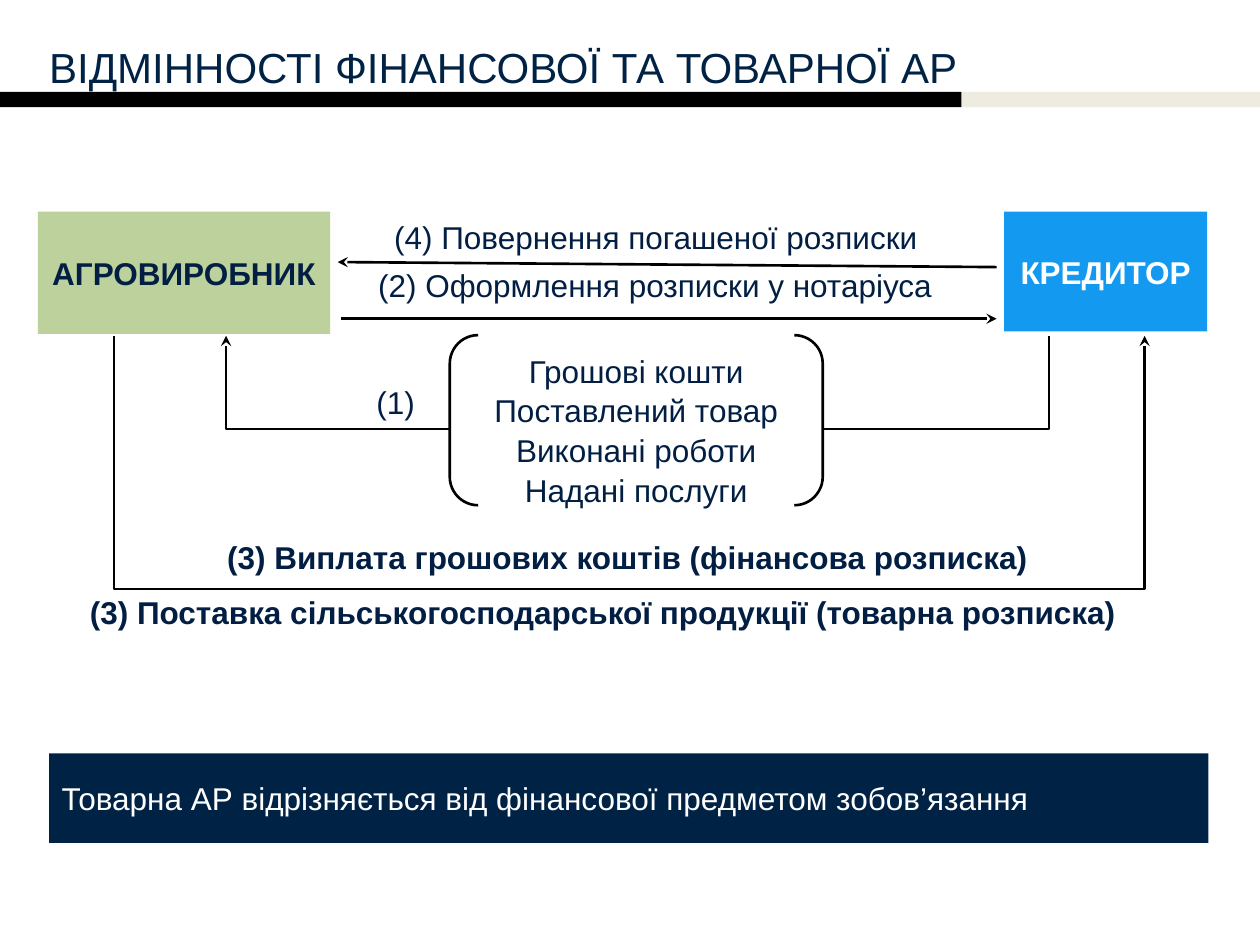
from lxml import etree
from pptx import Presentation
from pptx.dml.color import RGBColor
from pptx.enum.shapes import MSO_CONNECTOR, MSO_SHAPE
from pptx.enum.text import MSO_ANCHOR, PP_ALIGN
from pptx.oxml.ns import qn
from pptx.util import Inches, Pt

RECT, BRACKET, PAIR = MSO_SHAPE.RECTANGLE, MSO_SHAPE.LEFT_BRACKET, MSO_SHAPE.DOUBLE_BRACKET
LEFT, CENTER = PP_ALIGN.LEFT, PP_ALIGN.CENTER
TOP, MIDDLE = MSO_ANCHOR.TOP, MSO_ANCHOR.MIDDLE
COLORS = {"navy": "002345", "ink": "021F43", "green": "BCD19B", "blue": "139AF0",
          "cream": "EEECE1", "black": "000000", "white": "FFFFFF"}

deck = Presentation()
deck.slide_width, deck.slide_height = Inches(10), Inches(7.5)
page = deck.slides.add_slide(deck.slide_layouts[5])
COL, ROW = deck.slide_width / 100, deck.slide_height / 75


def cells(left, top, width, height):
    """Turn grid columns and rows into slide lengths."""
    return [round(n * unit) for n, unit in zip((left, top, width, height), (COL, ROW, COL, ROW))]


def write(box, text, color, bold=False, align=CENTER, anchor=MIDDLE, size=18):
    frame = box.text_frame
    frame.text = text
    frame.word_wrap = True
    frame.vertical_anchor = anchor
    for para in frame.paragraphs:
        para.alignment = align
        for span in para.runs:
            span.font.name, span.font.size, span.font.bold = "Arial", Pt(size), bold
            span.font.color.rgb = RGBColor.from_string(COLORS[color])


# Header band and title
blocks = []
for place, fill in [
    ((73.4, 7.3, 26.6, 1.2), "cream"),
    ((0, 7.3, 76.3, 1.2), "black"),
    ((3, 16.8, 23.2, 9.7), "green"),
    ((79.7, 16.8, 16.1, 9.5), "blue"),
    ((3.9, 59.8, 92, 7.1), "navy"),
]:
    block = page.shapes.add_shape(RECT, *cells(*place))
    block.shadow.inherit = False
    block.fill.solid()
    block.fill.fore_color.rgb = RGBColor.from_string(COLORS[fill])
    block.line.fill.background()
    blocks.append(block)

title = page.shapes.title
title.left, title.top, title.width, title.height = cells(3.9, 3, 94, 3.6)
write(title, "ВІДМІННОСТІ ФІНАНСОВОЇ ТА ТОВАРНОЇ АР", "navy", align=LEFT, anchor=TOP, size=24)
frame = title.text_frame
frame.margin_left = frame.margin_right = frame.margin_bottom = 0
frame.margin_top = Inches(0.03)

# Parties and conclusion
producer, creditor, conclusion = blocks[2:]
for party, name, color in [(producer, "АГРОВИРОБНИК", "ink"), (creditor, "КРЕДИТОР", "white")]:
    write(party, name, color, bold=True)
    party.text_frame.margin_left = party.text_frame.margin_right = 0
write(conclusion, "Товарна АР відрізняється від фінансової предметом зобов’язання", "white", align=LEFT)

# Flows between the parties
flows = []
for ends in [(27.1, 25.3, 79.1, 25.3), (79.1, 21.2, 26.8, 20.8)]:
    arrow = page.shapes.add_connector(MSO_CONNECTOR.STRAIGHT, *cells(*ends))
    etree.SubElement(arrow._element.spPr, qn("a:effectLst"))
    flows.append(arrow)

for place, turn, mirrored in [((46.9, -2.3, 7.4, 65.3), 270, False),
                              ((39.9, -4.2, 20.1, 81.8), 90, True)]:
    route = page.shapes.add_shape(BRACKET, *cells(*place))
    route.adjustments[0] = 0
    route.rotation = turn
    if mirrored:
        route._element.spPr.find(qn("a:xfrm")).set("flipH", "1")
    route.fill.background()
    route.shadow.inherit = False
    flows.append(route)

for flow in flows:
    flow.line.color.rgb = RGBColor.from_string(COLORS["black"])
    flow.line.width = Pt(1.5)
    etree.SubElement(flow.line._get_or_add_ln(), qn("a:tailEnd"), type="stealth")

# What the creditor provides
goods = page.shapes.add_shape(PAIR, *cells(35.7, 26.6, 29.6, 13.5))
goods.adjustments[0] = 0.167
goods.shadow.inherit = False
goods.fill.solid()
goods.fill.fore_color.rgb = RGBColor.from_string(COLORS["white"])
goods.line.color.rgb = RGBColor.from_string(COLORS["black"])
goods.line.width = Pt(1.5)
write(goods, "Грошові кошти\nПоставлений товар\nВиконані роботи\nНадані послуги", "ink", anchor=TOP)
for para in goods.text_frame.paragraphs:
    para.line_spacing = 1.05

# Step labels
for left, top, width, text, bold in [
    (30, 16.8, 44.1, "(4) Повернення погашеної розписки", False),
    (28.5, 20.6, 47, "(2) Оформлення розписки у нотаріуса", False),
    (28.5, 29.9, 5.8, "(1)", False),
    (15.7, 42.2, 68.2, "(3) Виплата грошових коштів (фінансова розписка)", True),
    (5.8, 46.6, 84.1, "(3) Поставка сільськогосподарської продукції (товарна розписка)", True),
]:
    label = page.shapes.add_textbox(*cells(left, top, width, 4))
    write(label, text, "ink", bold=bold, anchor=TOP)

deck.save("out.pptx")
